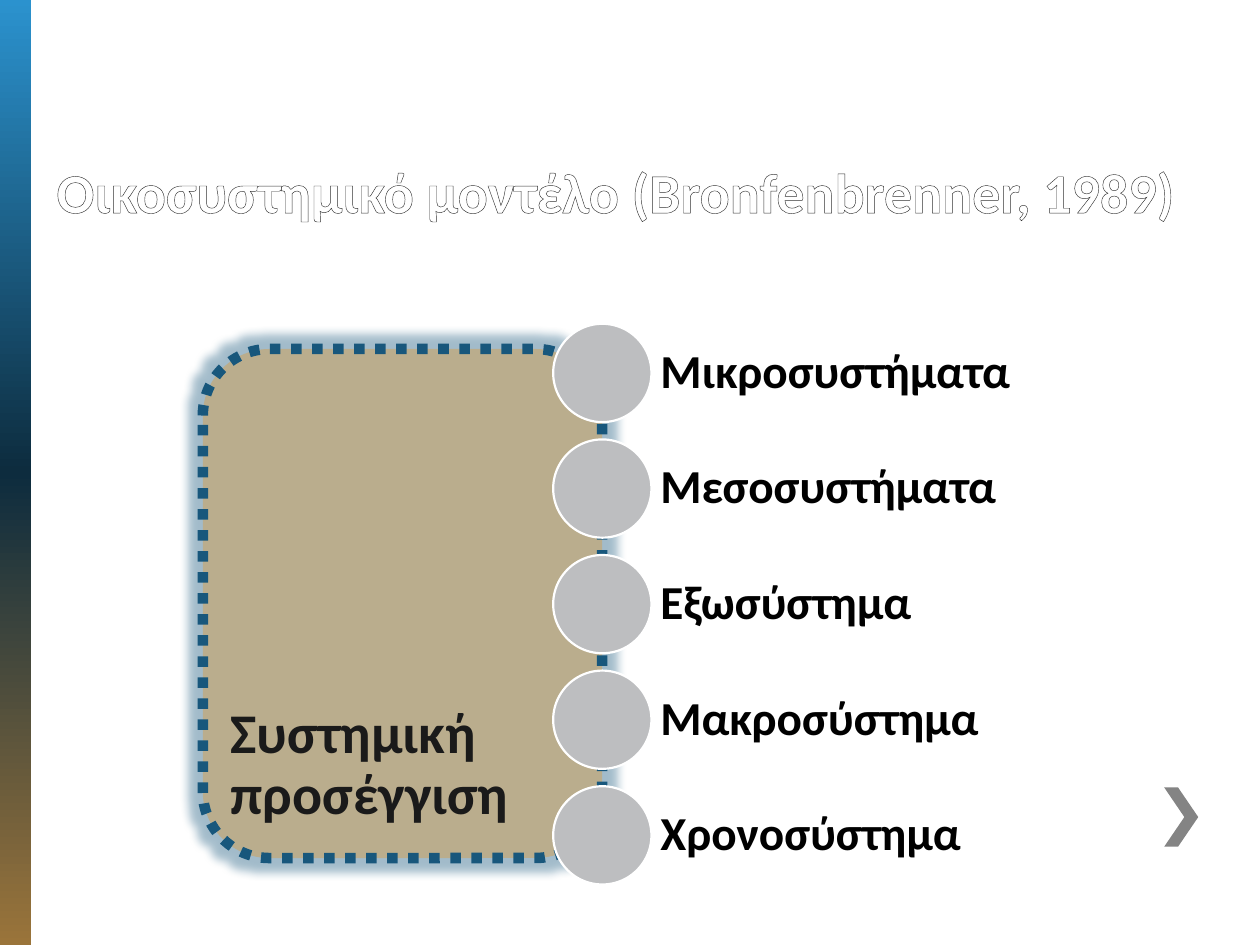
from dataclasses import dataclass

from lxml import etree
from pptx import Presentation
from pptx.dml.color import RGBColor
from pptx.enum import dml, shapes, text
from pptx.oxml import ns, parse_xml
from pptx.util import Inches, Pt


@dataclass(frozen=True)
class Theme:
    font: str = "Calibri"
    heading_size: int = 32
    label_size: int = 27
    strip: tuple = ((0, "2B92CE"), (50, "0D2C3E"), (100, "9A743A"))
    chevron: str = "848484"
    title: str = "FFFFFF"
    title_outline: str = "323232"
    panel: str = "BAAD8D"
    panel_line: str = "18577C"
    panel_text: str = "1A1A1A"
    circle: str = "BDBEC0"
    circle_line: str = "FFFFFF"
    label: str = "000000"


THEME = Theme()
TITLE = "Οικοσυστημικό μοντέλο (Bronfenbrenner, 1989)"
APPROACH = "Συστημική προσέγγιση"
SYSTEMS = ["Μικροσυστήματα", "Μεσοσυστήματα", "Εξωσύστημα",
           "Μακροσύστημα", "Χρονοσύστημα"]


def inches(*lengths):
    return [Inches(length) for length in lengths]


def add_solid(slide, preset, box, fill, line=None, width=0):
    shape = slide.shapes.add_shape(preset, *inches(*box))
    shape.shadow.inherit = False
    shape.fill.solid()
    shape.fill.fore_color.rgb = RGBColor.from_string(fill)
    if line:
        shape.line.color.rgb = RGBColor.from_string(line)
        shape.line.width = Pt(width)
    else:
        shape.line.fill.background()
    return shape


def add_text(slide, box, words, size, color, anchor, margins, spacing=1.0):
    frame = slide.shapes.add_textbox(*inches(*box)).text_frame
    frame.word_wrap = True
    frame.vertical_anchor = anchor
    frame.margin_left = frame.margin_right = Inches(margins[0])
    frame.margin_top = frame.margin_bottom = Inches(margins[1])
    paragraph = frame.paragraphs[0]
    paragraph.text = words
    paragraph.line_spacing = spacing
    paragraph.font.name = THEME.font
    paragraph.font.size = Pt(size)
    paragraph.font.bold = True
    paragraph.font.color.rgb = RGBColor.from_string(color)
    return paragraph


def add_side_strip(slide, box):
    strip = add_solid(slide, shapes.MSO_SHAPE.RECTANGLE, box, THEME.strip[0][1])
    stops = "".join(f'<a:gs pos="{position * 1000}"><a:srgbClr val="{color}"/></a:gs>'
                    for position, color in THEME.strip)
    gradient = parse_xml(f'<a:gradFill {ns.nsdecls("a")}><a:gsLst>{stops}</a:gsLst>'
                         '<a:lin ang="5400000" scaled="0"/></a:gradFill>')
    properties = strip._element.spPr
    properties.replace(properties.find(ns.qn("a:solidFill")), gradient)


def add_chevron(slide, box):
    left, top, width, height = box
    arm = 0.11
    right, middle, bottom = left + width, top + height / 2, top + height
    outline = [(left, top), (right - arm, middle), (left, bottom),
               (left + arm, bottom), (right, middle), (left + arm, top)]
    points = [inches(*point) for point in outline]
    builder = slide.shapes.build_freeform(*points[0])
    builder.add_line_segments(points[1:], close=True)
    chevron = builder.convert_to_shape()
    chevron.shadow.inherit = False
    chevron.fill.solid()
    chevron.fill.fore_color.rgb = RGBColor.from_string(THEME.chevron)
    chevron.line.fill.background()


def add_title(slide, box):
    """Place the title in white letters with a thin dark outline."""
    title = add_text(slide, box, TITLE, THEME.heading_size, THEME.title,
                     text.MSO_ANCHOR.BOTTOM, (0.1, 0.05))
    outline = parse_xml(f'<a:ln {ns.nsdecls("a")} w="12700"><a:solidFill>'
                        f'<a:srgbClr val="{THEME.title_outline}"/></a:solidFill></a:ln>')
    title.runs[0].font._element.insert(0, outline)


def add_approach_panel(slide, box):
    """Place the dotted, glowing panel with its caption at the bottom."""
    left, top, width, height = box
    panel = add_solid(slide, shapes.MSO_SHAPE.ROUNDED_RECTANGLE, box,
                      THEME.panel, THEME.panel_line, 6)
    panel.line.dash_style = dml.MSO_LINE.ROUND_DOT
    effects = panel._element.spPr.find(ns.qn("a:effectLst"))
    glow = etree.SubElement(effects, ns.qn("a:glow"), rad=str(Pt(11)))
    color = etree.SubElement(glow, ns.qn("a:srgbClr"), val=THEME.panel_line)
    etree.SubElement(color, ns.qn("a:alpha"), val="40000")

    caption_height = 0.6 * height
    caption = (left + 0.13, top + height - 0.16 - caption_height, 2.44, caption_height)
    add_text(slide, caption, APPROACH, THEME.heading_size, THEME.panel_text,
             text.MSO_ANCHOR.BOTTOM, (0.09, 0.09), 0.9)


def add_systems(slide, box):
    """Spread one circle and its label per system evenly down the box."""
    left, top, width, height = box
    diameter = 0.78
    pitch = (height - diameter) / (len(SYSTEMS) - 1)
    for row, system in enumerate(SYSTEMS):
        y = top + row * pitch
        add_solid(slide, shapes.MSO_SHAPE.OVAL, (left, y, diameter, diameter),
                  THEME.circle, THEME.circle_line, 1.25)
        add_text(slide, (left + diameter, y, width - diameter, diameter), system,
                 THEME.label_size, THEME.label, text.MSO_ANCHOR.MIDDLE,
                 (0.07, 0.04), 0.9)


def main():
    deck = Presentation()
    deck.slide_width, deck.slide_height = inches(10, 7.5)
    slide = deck.slides.add_slide(deck.slide_layouts[6])
    add_side_strip(slide, (0, 0, 0.25, 7.5))
    add_chevron(slide, (9.24, 6.25, 0.27, 0.47))
    add_title(slide, (0.35, 0.58, 9.65, 1.25))
    add_approach_panel(slide, (1.61, 2.77, 3.17, 4.04))
    add_systems(slide, (4.39, 2.57, 3.73, 4.45))
    deck.save("out.pptx")


if __name__ == "__main__":
    main()
